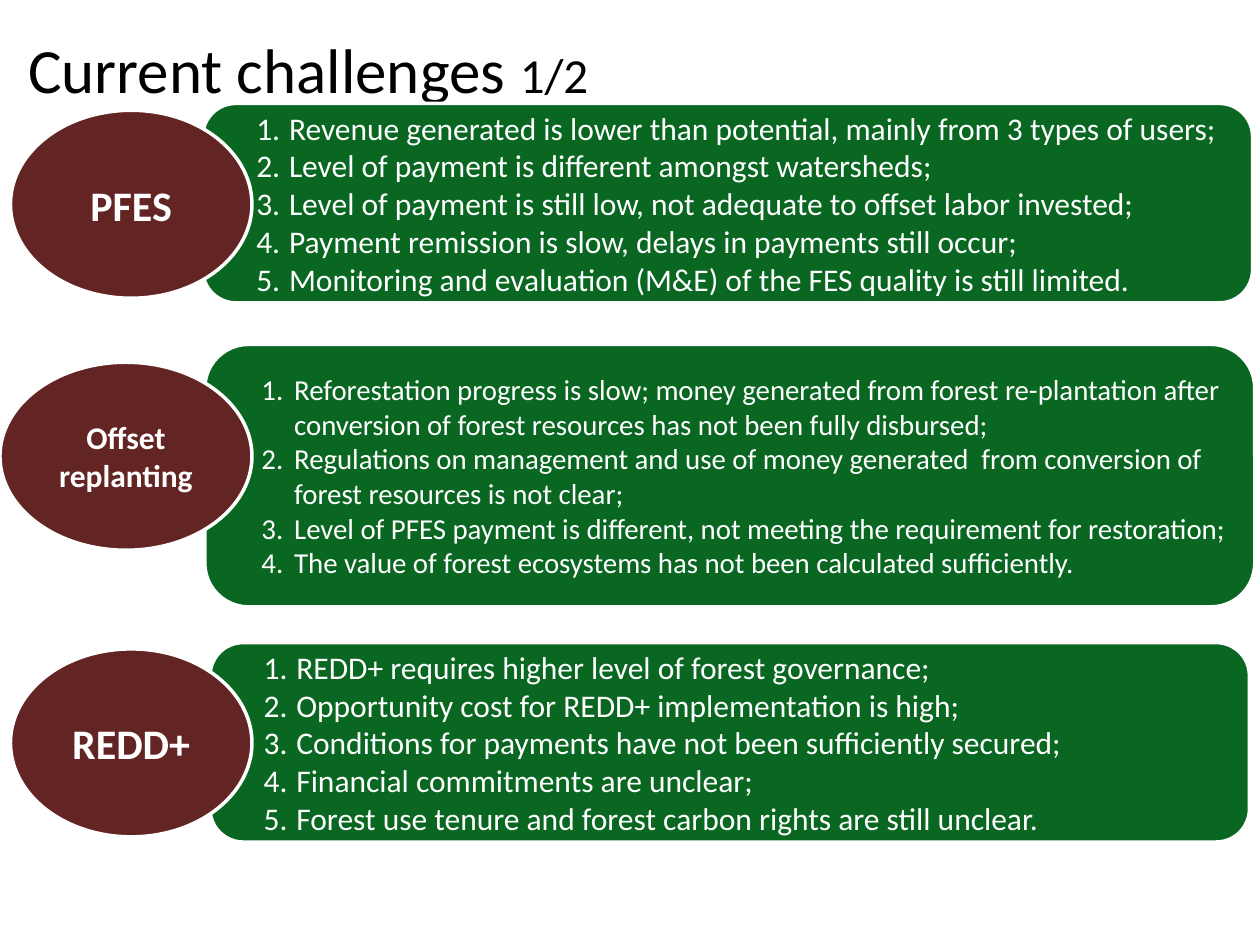
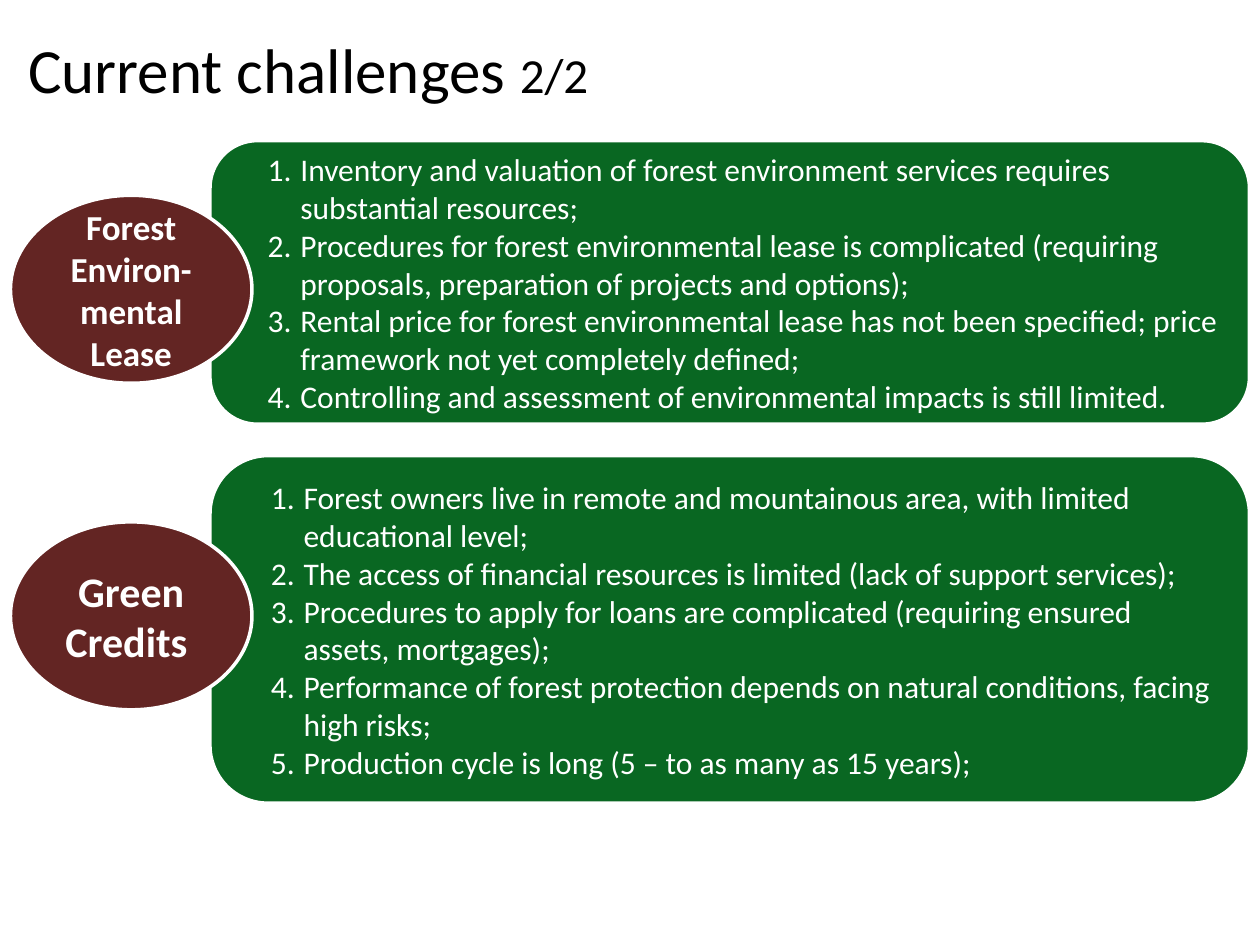
from pptx import Presentation
from pptx import util as u
from pptx.dml.color import RGBColor
from pptx.enum import shapes, text
from lxml import etree
from pptx.oxml import ns

GREEN = RGBColor(0x09, 0x67, 0x22)
MAROON = RGBColor(0x63, 0x25, 0x23)
WHITE = RGBColor(0xFF, 0xFF, 0xFF)
BLACK = RGBColor(0, 0, 0)
FONT = "Calibri"
COLS, ROWS = 120, 90

deck = Presentation()
deck.slide_width, deck.slide_height = u.Inches(10), u.Inches(7.5)
col = deck.slide_width / COLS
row = deck.slide_height / ROWS

BADGE_END, BADGE_TALL = 24, 17.9

pages = [
    ("1/2", [
        ("PFES", 24, 1, 10.5, (19.3, 9.85, 100, 19), 18, [
            "Revenue generated is lower than potential, mainly from 3 types of users;",
            "Level of payment is different amongst watersheds;",
            "Level of payment is still low, not adequate to offset labor invested;",
            "Payment remission is slow, delays in payments still occur;",
            "Monitoring and evaluation (M&E) of the FES quality is still limited."]),
        ("Offset replanting", 18, 0, 34.5, (19.5, 32.8, 100, 25), 16.5, [
            "Reforestation progress is slow; money generated from forest re-plantation after conversion of forest resources has not been fully disbursed;",
            "Regulations on management and use of money generated  from conversion of forest resources is not clear;",
            "Level of PFES payment is different, not meeting the requirement for restoration;",
            "The value of forest ecosystems has not been calculated sufficiently."]),
        ("REDD+", 24, 1, 61.8, (20, 61.2, 99, 19), 18, [
            "REDD+ requires higher level of forest governance;",
            "Opportunity cost for REDD+ implementation is high;",
            "Conditions for payments have not been sufficiently secured;",
            "Financial commitments are unclear;",
            "Forest use tenure and forest carbon rights are still unclear."]),
    ]),
    ("2/2", [
        ("Forest Environ-mental Lease", 20, 1, 18.6, (20, 13.4, 99, 27), 18, [
            "Inventory and valuation of forest environment services requires substantial resources;",
            "Procedures for forest environmental lease is complicated (requiring proposals, preparation of projects and options);",
            "Rental price for forest environmental lease has not been specified; price framework not yet completely defined;",
            "Controlling and assessment of environmental impacts is still limited."]),
        ("Green Credits ", 24, 1, 49.7, (20, 43.4, 99, 33.1), 18, [
            "Forest owners live in remote and mountainous area, with limited educational level;",
            "The access of financial resources is limited (lack of support services);",
            "Procedures to apply for loans are complicated (requiring ensured assets, mortgages);",
            "Performance of forest protection depends on natural conditions, facing high risks;",
            "Production cycle is long (5 – to as many as 15 years);"]),
    ]),
]


def style(run, size, color, bold=False):
    run.font.name, run.font.size, run.font.bold = FONT, u.Pt(size), bold
    run.font.color.rgb = color


def block(slide, kind, grid, fill, lines, size, align, bold=False):
    x, y, w, h = grid
    shape = slide.shapes.add_shape(kind, int(x * col), int(y * row), int(w * col), int(h * row))
    shape.shadow.inherit = False
    shape.fill.solid()
    shape.fill.fore_color.rgb = fill
    shape.line.color.rgb = WHITE
    shape.line.width = u.Pt(2)
    frame = shape.text_frame
    frame.word_wrap = True
    frame.vertical_anchor = text.MSO_ANCHOR.MIDDLE
    frame.text = "\n".join(lines)
    for para in frame.paragraphs:
        para.alignment = align
        style(para.runs[0], size, WHITE, bold)
    return frame


for number, topics in pages:
    slide = deck.slides.add_slide(deck.slide_layouts[6])
    title = slide.shapes.add_textbox(int(1.5 * col), int(2.3 * row), int(118.5 * col), int(8.5 * row))
    title.text_frame.word_wrap = True
    para = title.text_frame.paragraphs[0]
    for words, size in (("Current challenges ", 36), (number, 28)):
        run = para.add_run()
        run.text = words
        style(run, size, BLACK)

    for name, big, left, top, panel, size, items in topics:
        frame = block(slide, shapes.MSO_SHAPE.ROUNDED_RECTANGLE, panel, GREEN, items, size,
                      text.PP_ALIGN.LEFT)
        for para in frame.paragraphs:
            props = para._p.get_or_add_pPr()
            props.set("marL", str(u.Inches(0.51)))
            props.set("indent", str(u.Inches(-0.26)))
            etree.SubElement(props, ns.qn("a:buAutoNum"), type="arabicPeriod")
        badge = (left, top, BADGE_END - left, BADGE_TALL)
        block(slide, shapes.MSO_SHAPE.OVAL, badge, MAROON, [name], big,
              text.PP_ALIGN.CENTER, True)

deck.save("out.pptx")
